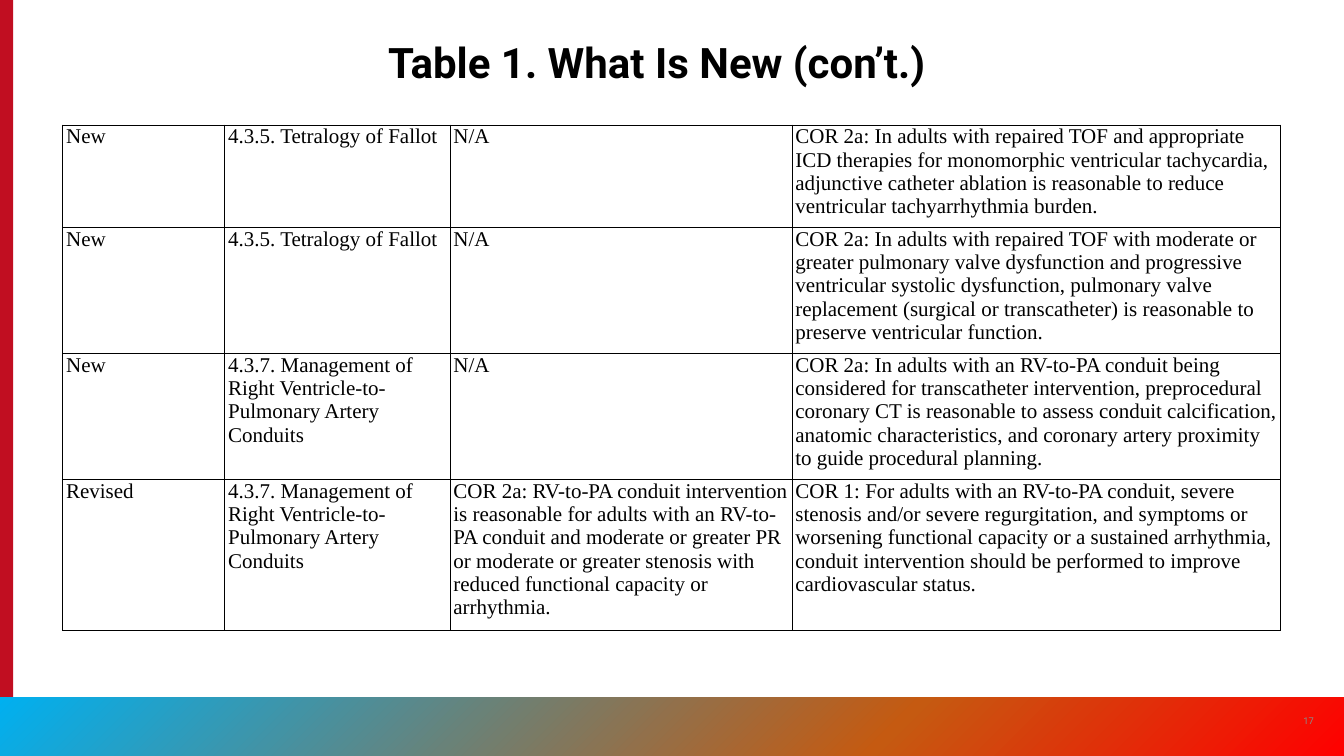
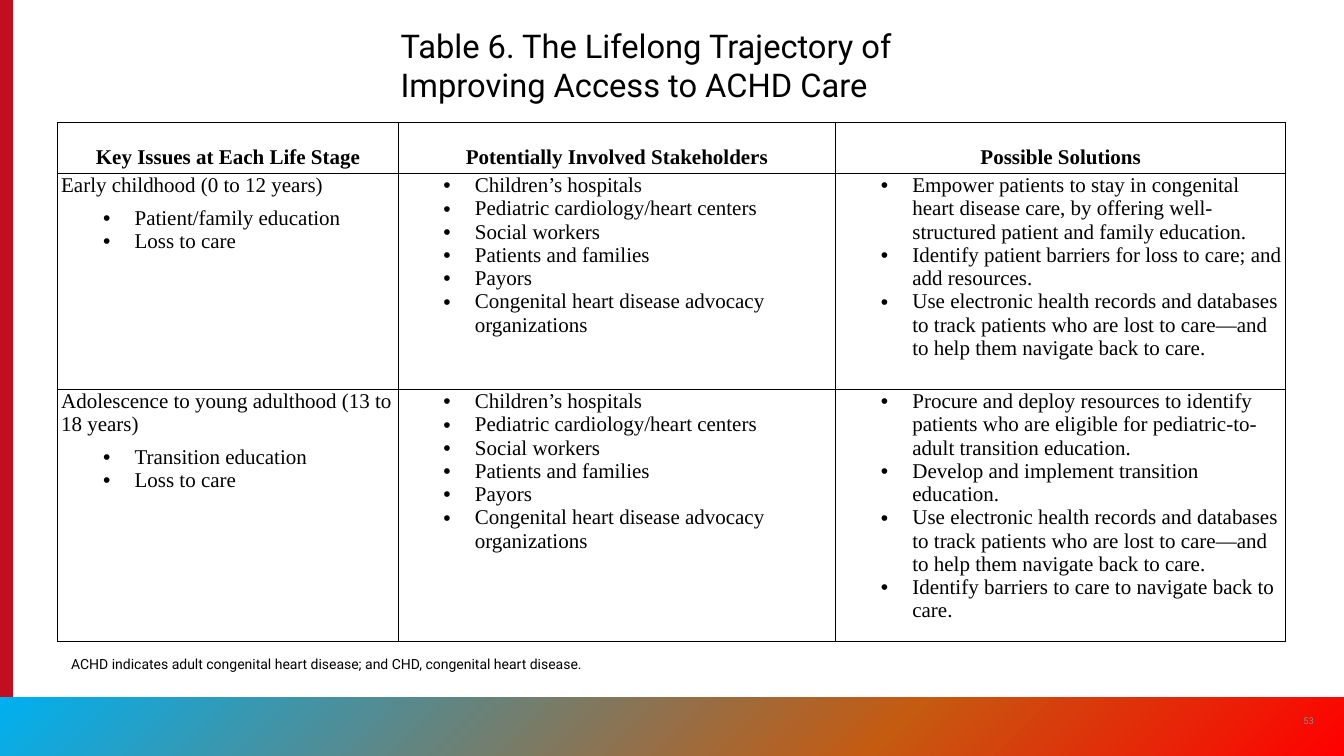
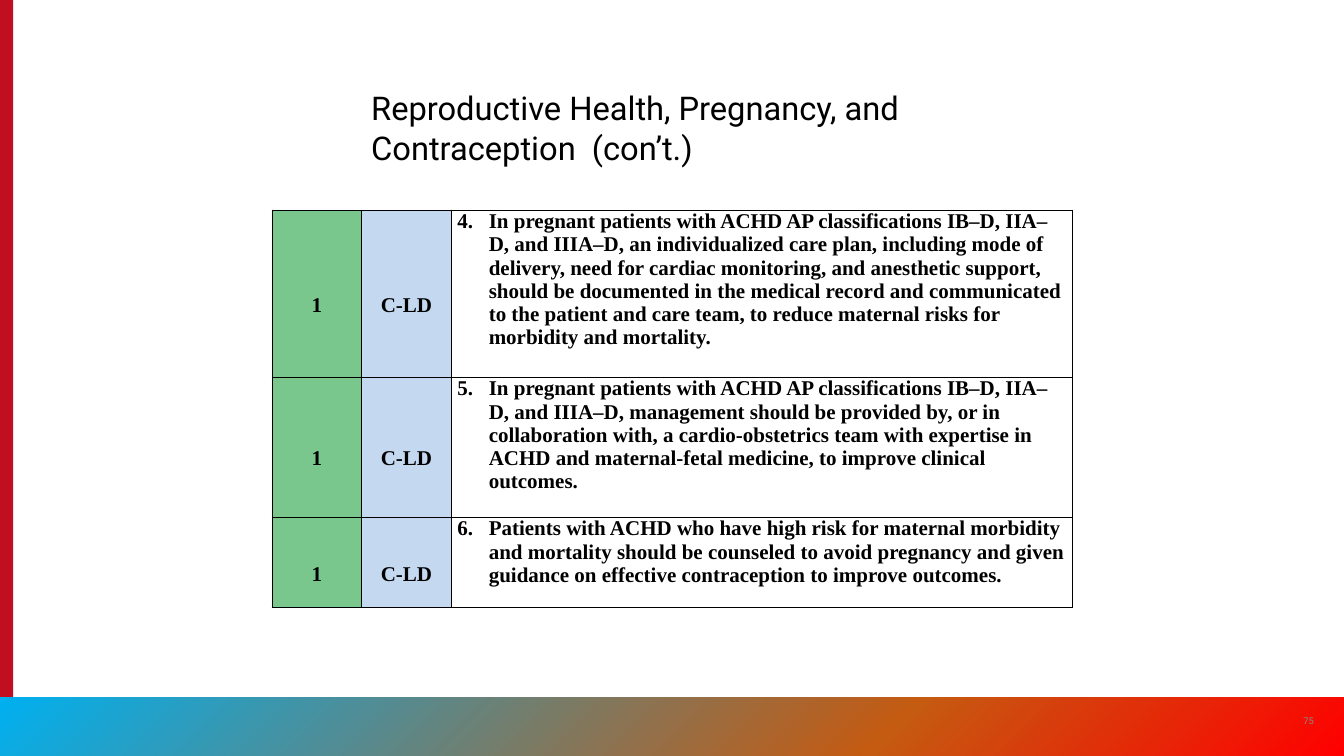
from lxml.etree import SubElement
from pptx import Presentation
from pptx.dml.color import RGBColor
from pptx.enum.shapes import MSO_SHAPE
from pptx.enum.text import MSO_ANCHOR, MSO_AUTO_SIZE, PP_ALIGN
from pptx.oxml import parse_xml
from pptx.oxml.ns import nsdecls, qn
from pptx.util import Cm, Pt

WIDTH, HEIGHT = 40.64, 22.86
BAND_TOP, BAND_HEIGHT = 21.08, 1.78
BLACK, RED, GREY = "000000", "C10E21", "8A8B8A"
GREEN, BLUE = "79C78D", "C4D9F0"
BAND_STOPS = [(0, "00B0F0"), (66, "C55A11"), (100, "FF0000")]
HEADING_FONT, TABLE_FONT = "Roboto", "Times New Roman"

PARAGRAPH_FORMATS = {
    "body": {"space_after": Pt(8)},
    "centred": {"alignment": PP_ALIGN.CENTER, "line_spacing": 2.0, "space_after": Pt(8)},
    "bullet": {"level": 1},
    "numbered": {"space_after": Pt(8)},
}
INDENTS = {"bullet": (2.22, -0.95), "numbered": (0.95, -0.95)}


def colour(value):
    return RGBColor.from_string(value)


def assign(target, values):
    for name, value in values.items():
        setattr(target, name, value)


def bullets(*texts):
    return [("bullet", text) for text in texts]


class SlideBuilder:
    def __init__(self):
        self.deck = Presentation()
        assign(self.deck, {"slide_width": Cm(WIDTH), "slide_height": Cm(HEIGHT)})
        self.page = None

    def start_page(self, number):
        self.page = self.deck.slides.add_slide(self.deck.slide_layouts[5])
        strip = self.rectangle(0, 0, 0.4, HEIGHT)
        strip.fill.solid()
        strip.fill.fore_color.rgb = colour(RED)
        band = self.rectangle(0, BAND_TOP, WIDTH, BAND_HEIGHT)
        self.gradient(band)
        self.text(number, 38.96, 21.18, 1.22, 1.22, 8, GREY,
                  anchor=MSO_ANCHOR.MIDDLE, alignment=PP_ALIGN.CENTER)

    def rectangle(self, left, top, width, height):
        shape = self.page.shapes.add_shape(
            MSO_SHAPE.RECTANGLE, Cm(left), Cm(top), Cm(width), Cm(height))
        shape.shadow.inherit = False
        shape.line.fill.background()
        return shape

    def gradient(self, shape):
        stops = "".join(
            f'<a:gs pos="{position * 1000}"><a:srgbClr val="{value}"/></a:gs>'
            for position, value in BAND_STOPS)
        fill = parse_xml(
            f'<a:gradFill {nsdecls("a")} rotWithShape="1"><a:gsLst>{stops}</a:gsLst>'
            '<a:lin ang="2700000" scaled="0"/></a:gradFill>')
        shape.element.spPr.find(qn("a:prstGeom")).addnext(fill)

    def add_span(self, para, text, size, font=HEADING_FONT, value=BLACK, bold=False):
        span = para.add_run()
        span.text = text
        assign(span.font, {"name": font, "size": Pt(size), "bold": bold})
        span.font.color.rgb = colour(value)

    def text(self, text, left, top, width, height, size, value=BLACK,
             anchor=MSO_ANCHOR.TOP, alignment=PP_ALIGN.LEFT):
        box = self.page.shapes.add_textbox(Cm(left), Cm(top), Cm(width), Cm(height))
        assign(box.text_frame, {"word_wrap": True, "vertical_anchor": anchor})
        para = box.text_frame.paragraphs[0]
        para.alignment = alignment
        self.add_span(para, text, size, value=value)

    def title(self, text, left, top, width, height, size=28, bold=False,
              anchor=MSO_ANCHOR.TOP):
        box = self.page.shapes.title
        assign(box, {"left": Cm(left), "top": Cm(top),
                     "width": Cm(width), "height": Cm(height)})
        assign(box.text_frame, {"word_wrap": True, "vertical_anchor": anchor,
                                "auto_size": MSO_AUTO_SIZE.NONE})
        para = box.text_frame.paragraphs[0]
        para.alignment = PP_ALIGN.LEFT
        self.add_span(para, text, size, bold=bold)

    def table(self, left, top, widths, heights, rows, inset=0.1, fills=(), bold_rows=()):
        frame = self.page.shapes.add_table(
            len(rows), len(widths), Cm(left), Cm(top), Cm(sum(widths)), Cm(sum(heights)))
        table = frame.table
        assign(table, {"first_row": False, "horz_banding": False})
        for column, width in zip(table.columns, widths):
            column.width = Cm(width)
        for row, height in zip(table.rows, heights):
            row.height = Cm(height)
        for row_index, row in enumerate(rows):
            for column_index, lines in enumerate(row):
                fill = fills[column_index] if fills else None
                self.cell(table.cell(row_index, column_index), lines, inset, fill,
                          row_index in bold_rows)

    def cell(self, cell, lines, inset, fill, bold):
        assign(cell, {"margin_left": Cm(inset), "margin_right": Cm(inset),
                      "margin_top": 0, "margin_bottom": 0,
                      "vertical_anchor": MSO_ANCHOR.MIDDLE if fill else MSO_ANCHOR.TOP})
        self.borders(cell)
        if fill:
            cell.fill.solid()
            cell.fill.fore_color.rgb = colour(fill)
        else:
            cell.fill.background()
        for index, (kind, text, *start) in enumerate(lines):
            para = cell.text_frame.add_paragraph() if index else cell.text_frame.paragraphs[0]
            if kind in INDENTS:
                self.marker(para, kind, start)
            assign(para, PARAGRAPH_FORMATS[kind])
            self.add_span(para, text, 18, TABLE_FONT, bold=bold)

    def borders(self, cell):
        properties = cell._tc.get_or_add_tcPr()
        for side in ("lnL", "lnR", "lnT", "lnB"):
            line = SubElement(properties, qn(f"a:{side}"), w=str(Pt(1)))
            solid = SubElement(line, qn("a:solidFill"))
            SubElement(solid, qn("a:srgbClr"), val=BLACK)

    def marker(self, para, kind, start):
        properties = para._p.get_or_add_pPr()
        margin, indent = INDENTS[kind]
        properties.set("marL", str(Cm(margin)))
        properties.set("indent", str(Cm(indent)))
        if start:
            SubElement(properties, qn("a:buAutoNum"), type="arabicPeriod",
                       startAt=str(start[0]))
        else:
            SubElement(properties, qn("a:buFont"), typeface="Arial")
            SubElement(properties, qn("a:buChar"), char="•")


FALLOT = "4.3.5. Tetralogy of Fallot"
CONDUITS = "4.3.7. Management of Right Ventricle-to-Pulmonary Artery Conduits"
CHANGES = [
    ("New", FALLOT, "N/A",
     "COR 2a: In adults with repaired TOF and appropriate ICD therapies for monomorphic "
     "ventricular tachycardia, adjunctive catheter ablation is reasonable to reduce "
     "ventricular tachyarrhythmia burden."),
    ("New", FALLOT, "N/A",
     "COR 2a: In adults with repaired TOF with moderate or greater pulmonary valve "
     "dysfunction and progressive ventricular systolic dysfunction, pulmonary valve "
     "replacement (surgical or transcatheter) is reasonable to preserve ventricular function."),
    ("New", CONDUITS, "N/A",
     "COR 2a: In adults with an RV-to-PA conduit being considered for transcatheter "
     "intervention, preprocedural coronary CT is reasonable to assess conduit calcification, "
     "anatomic characteristics, and coronary artery proximity to guide procedural planning."),
    ("Revised", CONDUITS,
     "COR 2a: RV-to-PA conduit intervention is reasonable for adults with an RV-to-PA conduit "
     "and moderate or greater PR or moderate or greater stenosis with reduced functional "
     "capacity or arrhythmia.",
     "COR 1: For adults with an RV-to-PA conduit, severe stenosis and/or severe regurgitation, "
     "and symptoms or worsening functional capacity or a sustained arrhythmia, conduit "
     "intervention should be performed to improve cardiovascular status."),
]

STAGE_HEADINGS = ["Key Issues at Each Life Stage", "Potentially Involved Stakeholders",
                  "Possible Solutions"]
STAKEHOLDERS = bullets(
    "Children’s hospitals", "Pediatric cardiology/heart centers", "Social workers",
    "Patients and families", "Payors", "Congenital heart disease advocacy organizations")
TRACKING = ("Use electronic health records and databases to track patients who are lost to "
            "care—and to help them navigate back to care.")
STAGES = [
    [[("body", "Early childhood (0 to 12 years)"),
      *bullets("Patient/family education", "Loss to care")],
     STAKEHOLDERS,
     bullets("Empower patients to stay in congenital heart disease care, by offering "
             "well-structured patient and family education.",
             "Identify patient barriers for loss to care; and add resources.",
             TRACKING)],
    [[("body", "Adolescence to young adulthood (13 to 18 years)"),
      *bullets("Transition education", "Loss to care")],
     STAKEHOLDERS,
     bullets("Procure and deploy resources to identify patients who are eligible for "
             "pediatric-to-adult transition education.",
             "Develop and implement transition education.",
             TRACKING,
             "Identify barriers to care to navigate back to care.")],
]

RECOMMENDATIONS = [
    "In pregnant patients with ACHD AP classifications IB–D, IIA–D, and IIIA–D, an "
    "individualized care plan, including mode of delivery, need for cardiac monitoring, and "
    "anesthetic support, should be documented in the medical record and communicated to the "
    "patient and care team, to reduce maternal risks for morbidity and mortality.",
    "In pregnant patients with ACHD AP classifications IB–D, IIA–D, and IIIA–D, management "
    "should be provided by, or in collaboration with, a cardio-obstetrics team with expertise "
    "in ACHD and maternal-fetal medicine, to improve clinical outcomes.",
    "Patients with ACHD who have high risk for maternal morbidity and mortality should be "
    "counseled to avoid pregnancy and given guidance on effective contraception to improve "
    "outcomes.",
]


def main():
    builder = SlideBuilder()

    builder.start_page("17")
    builder.title("Table 1. What Is New (con’t.)", 11.48, 1.07, 17.68, 1.7, size=36,
                  bold=True, anchor=MSO_ANCHOR.BOTTOM)
    builder.table(1.9, 3.78, [4.9, 6.81, 10.34, 14.78], [3.1, 3.63, 3.63, 4.17],
                  [[[("body", text)] for text in row] for row in CHANGES])

    builder.start_page("53")
    builder.title("Table 6. The Lifelong Trajectory of Improving Access to ACHD Care",
                  11.86, 0.64, 16.94, 2.64)
    headings = [[("centred", text)] for text in STAGE_HEADINGS]
    builder.table(1.75, 3.71, [10.29, 13.23, 13.61], [1.55, 6.53, 7.62],
                  [headings, *STAGES], bold_rows=[0])
    builder.text("ACHD indicates adult congenital heart disease; and CHD, congenital heart "
                 "disease.", 1.9, 19.71, 20.32, 0.76, 12)

    builder.start_page("75")
    builder.title("Reproductive Health, Pregnancy, and Contraception  (con’t.)",
                  10.97, 2.54, 18.69, 2.64)
    rows = [[[("centred", "1")], [("centred", "C-LD")], [("numbered", text, number)]]
            for number, text in enumerate(RECOMMENDATIONS, 4)]
    builder.table(8.23, 6.35, [2.7, 2.72, 18.77], [5.05, 4.24, 2.74], rows,
                  inset=0.18, fills=(GREEN, BLUE, None), bold_rows=range(len(rows)))

    builder.deck.save("out.pptx")


if __name__ == "__main__":
    main()
